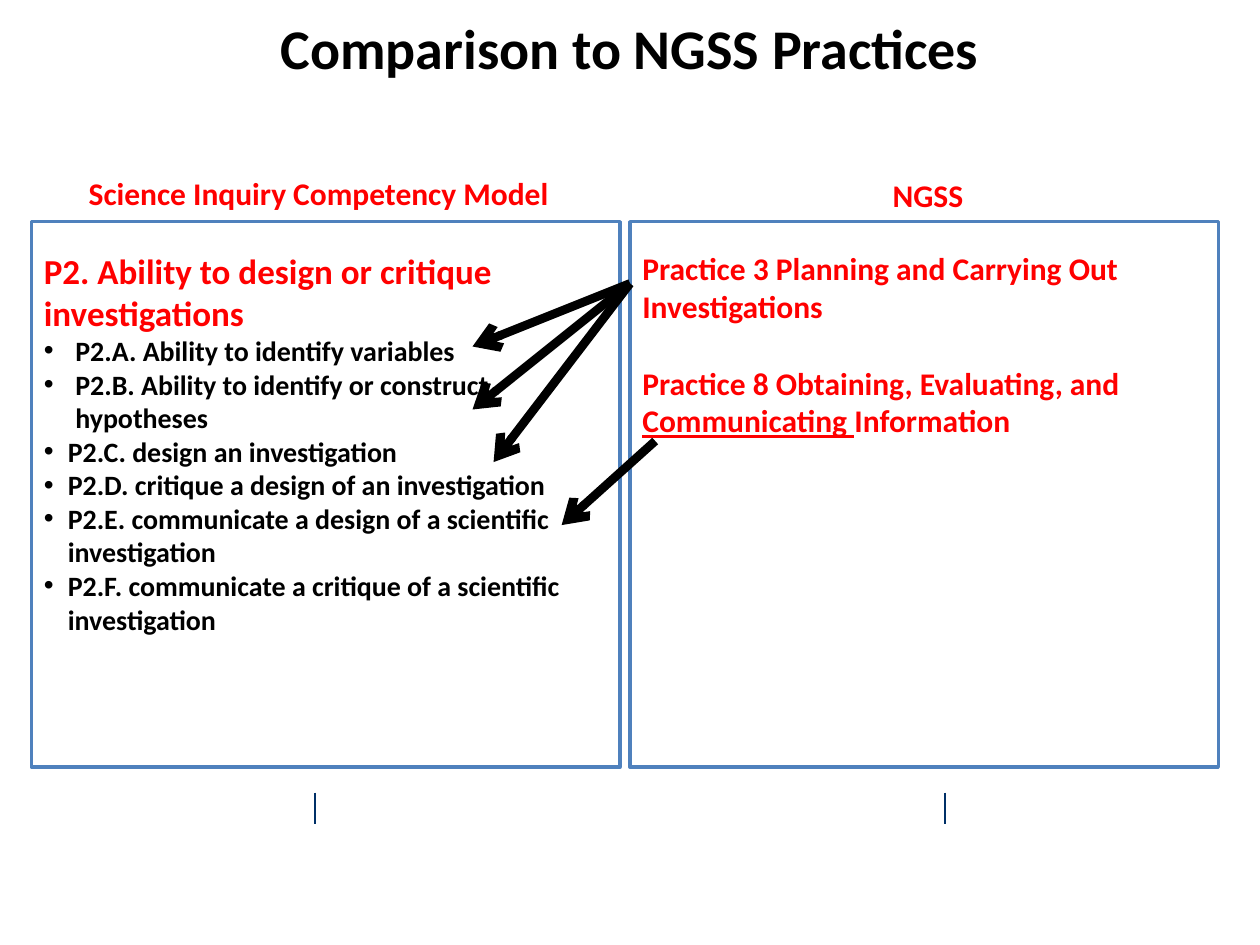
from lxml.etree import SubElement
from pptx import Presentation
from pptx.dml.color import RGBColor
from pptx.enum.shapes import MSO_CONNECTOR as Connector, MSO_SHAPE as Shape
from pptx.enum.text import MSO_ANCHOR as Anchor, PP_ALIGN as Align
from pptx.oxml.ns import qn
from pptx.util import Inches, Pt

BLACK, RED, WHITE, BLUE, NAVY = "000000", "FF0000", "FFFFFF", "4F81BD", "003067"


def color(hex_string):
    return RGBColor.from_string(hex_string)


class SlideBuilder:
    """Places elements on a grid of 40 columns by 30 rows."""
    font_name = "Calibri"
    cell = 0.25

    def __init__(self, slide):
        self.slide = slide

    def grid(self, *values):
        return [Inches(value * self.cell) for value in values]

    def format_runs(self, paragraph, size, hex_string):
        for run in paragraph.runs:
            run.font.name = self.font_name
            run.font.size = Pt(size)
            run.font.bold = True
            run.font.color.rgb = color(hex_string)

    def panel(self, column, row, columns, rows):
        shape = self.slide.shapes.add_shape(
            Shape.RECTANGLE, *self.grid(column, row, columns, rows))
        shape.shadow.inherit = False
        shape.fill.solid()
        shape.fill.fore_color.rgb = color(WHITE)
        shape.line.color.rgb = color(BLUE)
        shape.line.width = Pt(2)
        frame = shape.text_frame
        frame.word_wrap = True
        frame.vertical_anchor = Anchor.TOP
        frame.margin_top = Inches(0.22)
        return frame

    def paragraph(self, frame, parts, size, hex_string, indent=0, space=0):
        first = frame.paragraphs[0]
        paragraph = frame.add_paragraph() if first.runs else first
        paragraph.alignment = Align.LEFT
        if space:
            paragraph.space_before = Pt(space)
        if indent:
            properties = paragraph._p.get_or_add_pPr()
            properties.set("marL", str(Inches(indent)))
            properties.set("indent", str(-Inches(indent)))
            SubElement(properties, qn("a:buFont"), typeface="Arial")
            SubElement(properties, qn("a:buChar"), char="•")
        for part in parts:
            paragraph.add_run().text = part
        self.format_runs(paragraph, size, hex_string)
        return paragraph

    def label(self, text, place, size, hex_string, anchor=Anchor.TOP, wrap=False):
        frame = self.slide.shapes.add_textbox(*self.grid(*place)).text_frame
        frame.word_wrap = wrap
        frame.vertical_anchor = anchor
        frame.text = text
        frame.paragraphs[0].alignment = Align.CENTER
        self.format_runs(frame.paragraphs[0], size, hex_string)

    def line(self, start, end, hex_string, width, arrow=False):
        connector = self.slide.shapes.add_connector(
            Connector.STRAIGHT, *self.grid(*start, *end))
        connector.line.color.rgb = color(hex_string)
        connector.line.width = Pt(width)
        if arrow:
            SubElement(connector.line._get_or_add_ln(), qn("a:tailEnd"), type="arrow")
        SubElement(connector._element.spPr, qn("a:effectLst"))


def main():
    presentation = Presentation()
    presentation.slide_width, presentation.slide_height = Inches(10), Inches(7.5)
    builder = SlideBuilder(
        presentation.slides.add_slide(presentation.slide_layouts[6]))

    # Footer ticks
    for column in (10, 30):
        builder.line((column, 25.16), (column, 26.16), NAVY, 0.75)

    # Two panels of equal size
    competency, practices = [
        builder.panel(column, 7.04, 18.68, 17.32) for column in (1, 20)]

    # Competency list
    builder.paragraph(
        competency, ["P2. Ability to design or critique investigations"], 20, RED)
    for text, indent in (
        ("P2.A. Ability to identify variables", 0.25),
        ("P2.B. Ability to identify or construct hypotheses", 0.25),
        ("P2.C. design an investigation", 0.19),
        ("P2.D. critique a design of an investigation", 0.19),
        ("P2.E. communicate a design of a scientific investigation", 0.19),
        ("P2.F. communicate a critique of a scientific investigation", 0.19),
    ):
        builder.paragraph(competency, [text], 16, BLACK, indent)

    # Practices
    builder.paragraph(
        practices, ["Practice 3 Planning and Carrying Out Investigations"], 18, RED)
    communication = builder.paragraph(
        practices,
        ["Practice 8 Obtaining, Evaluating, and ", "Communicating ", "Information"],
        18, RED, space=22)
    communication.runs[1].font.underline = True

    # Title and panel headings
    builder.label("Comparison to NGSS Practices", (2, -1, 36, 5), 32, BLACK,
                  Anchor.MIDDLE, wrap=True)
    builder.label("Science Inquiry Competency Model", (2.24, 5.32, 15.76, 1.6), 18, RED)
    builder.label("NGSS", (27.92, 5.4, 3.08, 1.6), 18, RED)

    # Arrows from practices to competencies
    planning = (20, 9)
    for start, end in (
        (planning, (15, 11)),
        (planning, (15, 13)),
        (planning, (15.67, 14.67)),
        ((20.8, 14), (17.83, 16.67)),
    ):
        builder.line(start, end, BLACK, 5, arrow=True)

    presentation.save("out.pptx")


if __name__ == "__main__":
    main()
